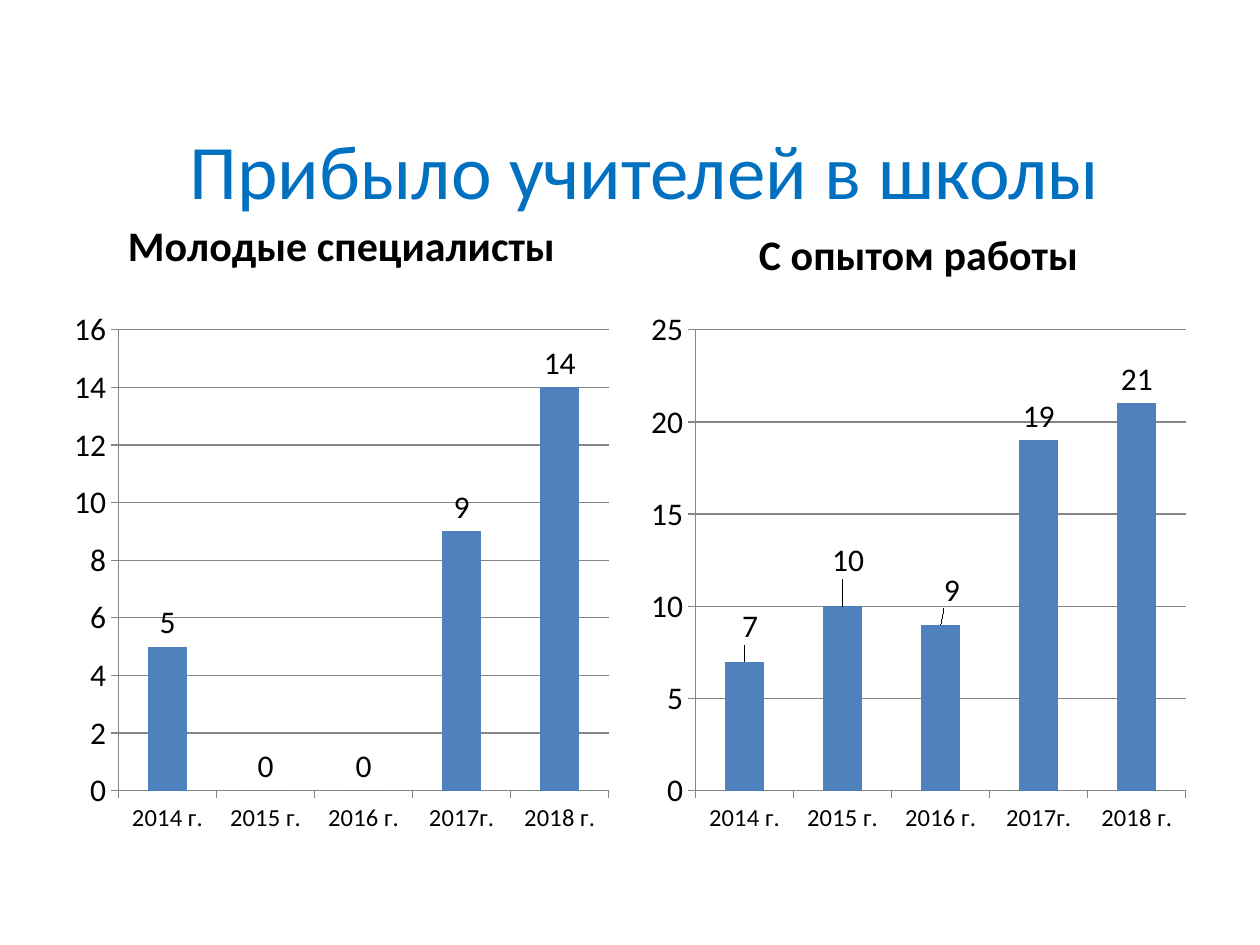
from lxml import etree
from pptx import Presentation
from pptx.chart.data import CategoryChartData
from pptx.dml.color import RGBColor
from pptx.enum.chart import XL_CHART_TYPE as ChartType
from pptx.enum.chart import XL_LABEL_POSITION as LabelPosition
from pptx.enum.chart import XL_TICK_MARK as TickMark
from pptx.enum.text import MSO_ANCHOR as Anchor
from pptx.enum.text import PP_ALIGN as Align
from pptx.oxml.ns import qn
from pptx.util import Inches, Pt

BLACK = RGBColor(0x00, 0x00, 0x00)
TITLE_BLUE = RGBColor(0x00, 0x70, 0xC0)
BAR_BLUE = RGBColor(0x4F, 0x81, 0xBD)
GRID_GRAY = RGBColor(0x86, 0x86, 0x86)
FONT_NAME = "Calibri"
YEARS = ["2014 г.", "2015 г.", "2016 г.", "2017г.", "2018 г."]
PANEL_WIDTH = 4.42
CHART_TOP, CHART_HEIGHT = 2.38, 4.32

PANELS = [
    {"left": 0.5, "heading": "Молодые специалисты", "heading_top": 1.41,
     "heading_height": 0.78, "values": [5, 0, 0, 9, 14], "label_shifts": []},
    {"left": 5.08, "heading": "С опытом работы", "heading_top": 1.56,
     "heading_height": 0.7, "values": [7, 10, 9, 19, 21],
     "label_shifts": [(0.01, -0.02), (0.01, -0.04), (0.02, -0.02)]},
]


def format_font(font, color=BLACK, **values):
    """Apply the slide font, a colour and further attributes."""
    for name, value in {"name": FONT_NAME, **values}.items():
        setattr(font, name, value)
    font.color.rgb = color


def fill_text(shape, text, anchor, color=BLACK, **values):
    """Put one centred paragraph into a shape."""
    frame = shape.text_frame
    frame.word_wrap = True
    frame.vertical_anchor = anchor
    paragraph = frame.paragraphs[0]
    paragraph.alignment = Align.CENTER
    run = paragraph.add_run()
    run.text = text
    format_font(run.font, color, **values)


def add_title(slide, box):
    """Move the title placeholder to the box and fill it."""
    title = slide.shapes.title
    for name, value in zip(("left", "top", "width", "height"), box):
        setattr(title, name, Inches(value))
    fill_text(title, " Прибыло учителей в школы", Anchor.MIDDLE, TITLE_BLUE,
              size=Pt(44))


def add_heading(slide, box, text):
    """Add a bold chart heading inside the box."""
    heading = slide.shapes.add_textbox(*map(Inches, box))
    fill_text(heading, text, Anchor.BOTTOM, size=Pt(24), bold=True)


def shift_labels(series, shifts):
    """Move the first data labels by fractions of the chart size."""
    for index, shift in enumerate(shifts):
        series.points[index].data_label.position = LabelPosition.OUTSIDE_END
    labels = series._element.iter(qn("c:dLbl"))
    for label, shift in zip(labels, shifts):
        layout = etree.Element(qn("c:layout"))
        manual = etree.SubElement(layout, qn("c:manualLayout"))
        for axis, value in zip("xy", shift):
            etree.SubElement(manual, qn(f"c:{axis}")).set("val", str(value))
        label.find(qn("c:idx")).addnext(layout)


def add_column_chart(slide, box, values, label_shifts):
    """Add a column chart of yearly counts inside the box."""
    data = CategoryChartData()
    data.categories = YEARS
    data.add_series("Series 1", values)
    chart = slide.shapes.add_chart(
        ChartType.COLUMN_CLUSTERED, *map(Inches, box), data).chart
    chart.has_legend = chart.has_title = False
    format_font(chart.font, size=Pt(18))

    plot = chart.plots[0]
    plot.gap_width = 150
    plot.vary_by_categories = False
    series = plot.series[0]
    series.format.fill.solid()
    series.format.fill.fore_color.rgb = BAR_BLUE
    series.data_labels.show_value = True
    series.data_labels.position = LabelPosition.OUTSIDE_END
    shift_labels(series, label_shifts)

    value_axis, category_axis = chart.value_axis, chart.category_axis
    value_axis.has_major_gridlines = True
    for axis in (value_axis, category_axis):
        axis.major_tick_mark = TickMark.OUTSIDE
        axis.minor_tick_mark = TickMark.NONE
    for part in (value_axis, category_axis, value_axis.major_gridlines):
        part.format.line.color.rgb = GRID_GRAY
        part.format.line.width = Pt(0.75)
    format_font(category_axis.tick_labels.font, size=Pt(14))


def add_panel(slide, panel):
    """Add a heading with its chart below."""
    left = panel["left"]
    add_heading(slide, (left, panel["heading_top"], PANEL_WIDTH,
                        panel["heading_height"]), panel["heading"])
    add_column_chart(slide, (left, CHART_TOP, PANEL_WIDTH, CHART_HEIGHT),
                     panel["values"], panel["label_shifts"])


def main():
    """Build the slide and save it."""
    presentation = Presentation()
    presentation.slide_width = Inches(10)
    presentation.slide_height = Inches(7.5)
    slide = presentation.slides.add_slide(presentation.slide_layouts[5])
    add_title(slide, (0.55, 1.02, 9, 0.63))
    for panel in PANELS:
        add_panel(slide, panel)
    presentation.save("out.pptx")


if __name__ == "__main__":
    main()
